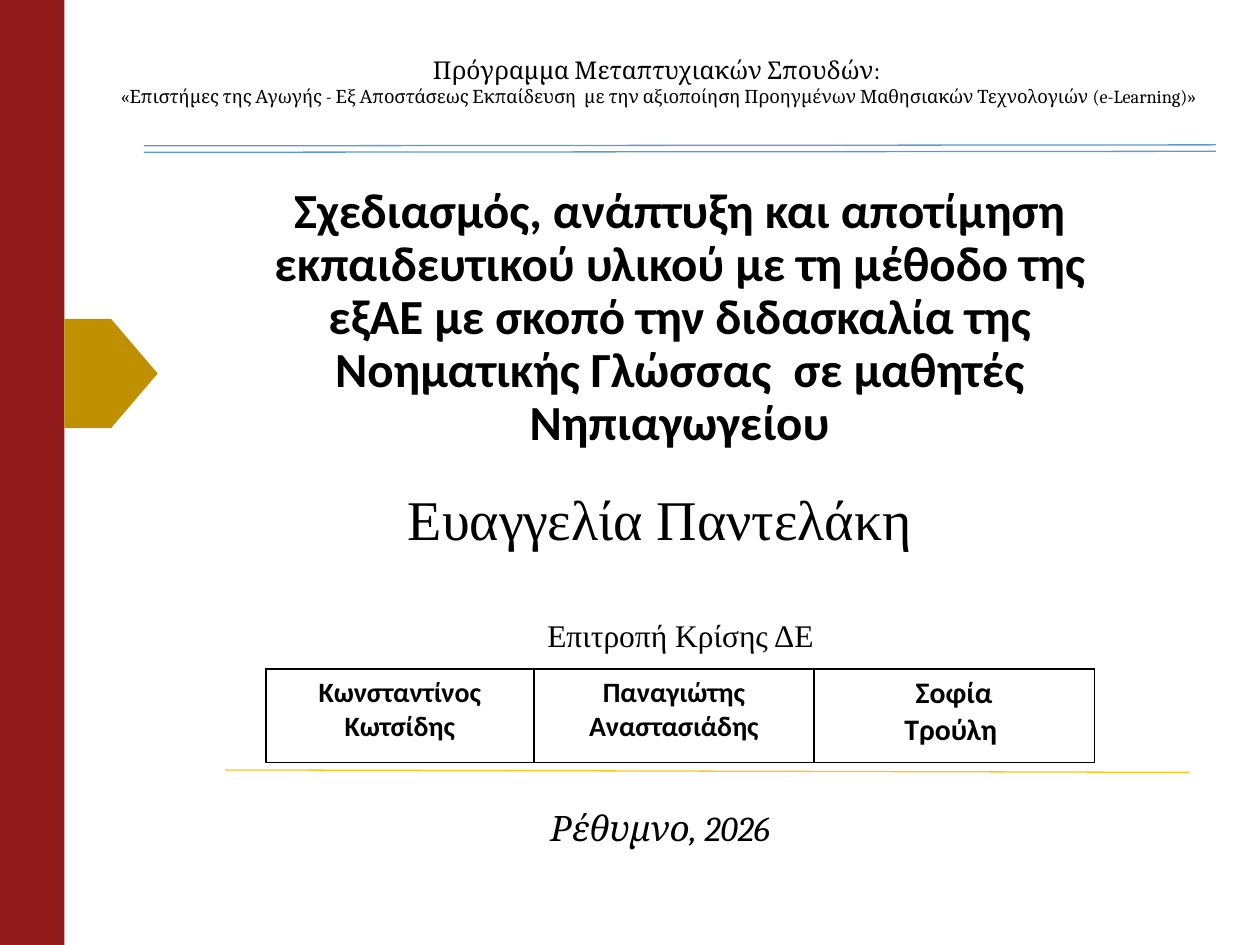
from lxml.etree import SubElement
from pptx import Presentation
from pptx.dml.color import RGBColor
from pptx.enum.shapes import MSO_CONNECTOR, MSO_SHAPE
from pptx.enum.text import MSO_ANCHOR, PP_ALIGN
from pptx.oxml import parse_xml
from pptx.oxml.ns import nsdecls, qn
from pptx.util import Cm, Pt

BLACK, WHITE, BLUE = "000000", "FFFFFF", "5B9BD5"
RED, GOLD, AMBER = "931B1B", "BF9000", "FFC61A"


def paint(target, color):
    """Give a fill a solid colour."""
    target.solid()
    target.fore_color.rgb = RGBColor.from_string(color)


class Deck:
    def __init__(self):
        self.show = Presentation()
        self.show.slide_width, self.show.slide_height = Cm(25.4), Cm(19.05)
        self.slide = self.show.slides.add_slide(self.show.slide_layouts[6])

    def block(self, kind, *area, color):
        shape = self.slide.shapes.add_shape(kind, *map(Cm, area))
        shape.shadow.inherit = False
        paint(shape.fill, color)
        shape.line.fill.background()

    def rule(self, *ends, color):
        line = self.slide.shapes.add_connector(
            MSO_CONNECTOR.STRAIGHT, *map(Cm, ends))
        paint(line.line.fill, color)
        line.line.width = Pt(0.75)
        SubElement(line._element.spPr, qn("a:effectLst"))

    def fill(self, frame, lines, face, bold=False, italic=False):
        """Fill a text frame with centred (text, size) paragraphs."""
        for i, (text, size) in enumerate(lines):
            para = frame.add_paragraph() if i else frame.paragraphs[0]
            para.text = text
            para.alignment = PP_ALIGN.CENTER
            para.font.name, para.font.size = face, Pt(size)
            para.font.bold, para.font.italic = bold, italic
            paint(para.font.fill, BLACK)

    def text(self, *area, lines, face, anchor=MSO_ANCHOR.TOP, **style):
        frame = self.slide.shapes.add_textbox(*map(Cm, area)).text_frame
        frame.word_wrap = True
        frame.vertical_anchor = anchor
        self.fill(frame, lines, face, **style)
        return frame

    def table(self, left, top, widths, height, cells):
        grid = self.slide.shapes.add_table(
            1, len(cells), Cm(left), Cm(top), Cm(sum(widths)), Cm(height)).table
        for i, (width, lines) in enumerate(zip(widths, cells)):
            grid.columns[i].width = Cm(width)
            cell = grid.cell(0, i)
            paint(cell.fill, WHITE)
            self.fill(cell.text_frame, lines, "Calibri", bold=True)
            self.edge(cell)

    def edge(self, cell):
        """Draw a thin black border on each side of a cell."""
        props = cell._tc.get_or_add_tcPr()
        for i, side in enumerate("LRTB"):
            props.insert(i, parse_xml(
                f'<a:ln{side} {nsdecls("a")} w="{Pt(1)}"><a:solidFill>'
                f'<a:srgbClr val="{BLACK}"/></a:solidFill></a:ln{side}>'))


def main():
    deck = Deck()

    # Side band and marker
    deck.block(MSO_SHAPE.RECTANGLE, 0, 0, 1.3, 19.05, color=RED)
    deck.block(MSO_SHAPE.PENTAGON, 1.3, 6.43, 1.88, 2.2, color=GOLD)

    # Programme heading with double rule
    deck.text(1.57, 0.99, 23.44, 1.3, face="Cambria", lines=[
        ("Πρόγραμμα Μεταπτυχιακών Σπουδών: ", 14),
        ("«Επιστήμες της Αγωγής - Εξ Αποστάσεως Εκπαίδευση  με την αξιοποίηση "
         "Προηγμένων Μαθησιακών Τεχνολογιών (e-Learning)»", 10.5)])
    for top in (2.94, 3.07):
        deck.rule(2.9, top, 24.51, top - 0.02, color=BLUE)

    # Title and author
    title = deck.text(
        4.34, 4.01, 18.72, 5.21, face="Calibri", anchor=MSO_ANCHOR.BOTTOM,
        bold=True, lines=[(
            "Σχεδιασμός, ανάπτυξη και αποτίμηση εκπαιδευτικού υλικού με τη "
            "μέθοδο της εξΑΕ με σκοπό την διδασκαλία της Nοηματικής Γλώσσας "
            " σε μαθητές Νηπιαγωγείου", 28)])
    title.paragraphs[0].line_spacing = 0.9
    deck.text(3.81, 9.65, 19, 1.62, face="Times New Roman",
              lines=[("Ευαγγελία Παντελάκη", 32)])

    # Committee
    deck.text(4.22, 12.29, 19, 1.02, face="Times New Roman",
              lines=[("Επιτροπή Κρίσης ΔΕ", 18)])
    deck.table(5.36, 13.49, (5.4, 5.65, 5.65), 1.88, [
        [("Κωνσταντίνος Κωτσίδης", 16)],
        [("Παναγιώτης Αναστασιάδης", 16)],
        [("Σοφία", 17), ("Τρούλη ", 17)]])

    # Place and year
    deck.rule(4.55, 15.52, 23.98, 15.57, color=AMBER)
    deck.text(3.3, 16.13, 20.02, 1.12, face="Cambria", italic=True,
              anchor=MSO_ANCHOR.MIDDLE, lines=[("Ρέθυμνο, 2026", 20)])

    deck.show.save("out.pptx")


if __name__ == "__main__":
    main()
